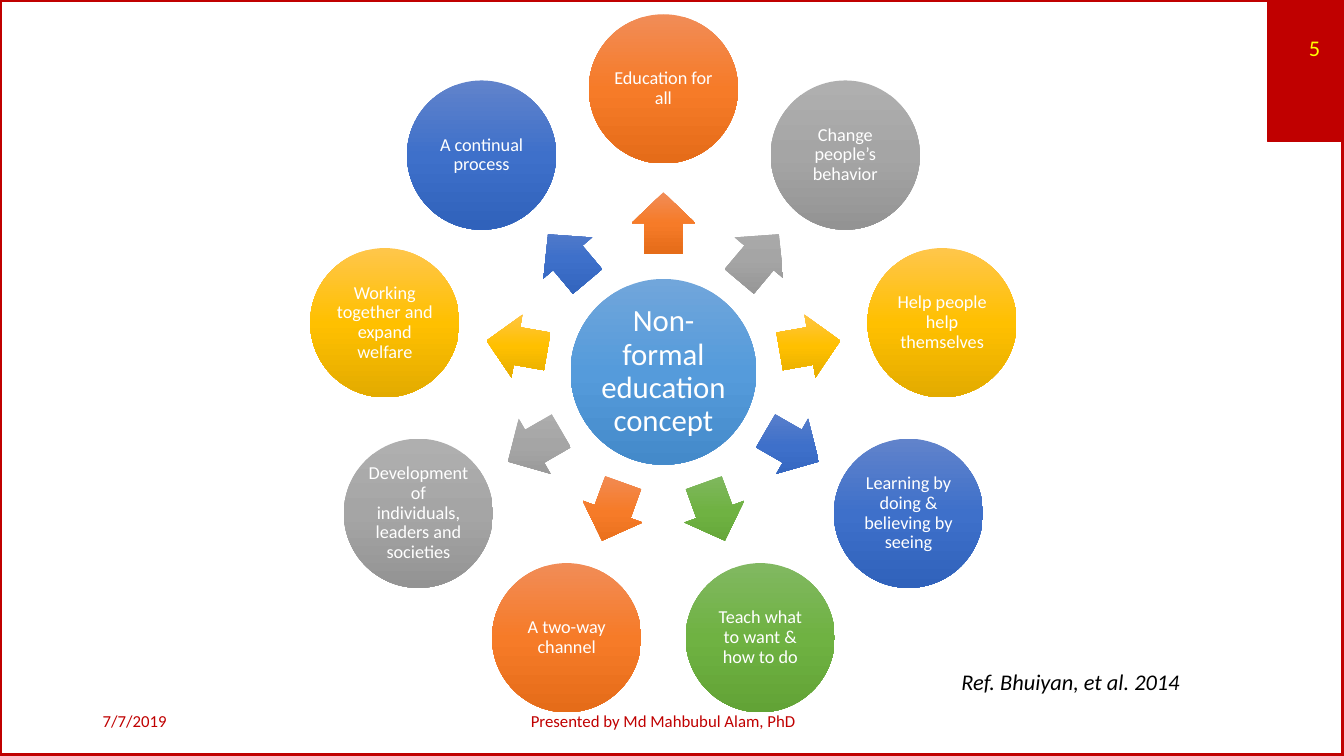
from copy import deepcopy
from math import cos, radians, sin

from pptx import Presentation
from pptx.dml.color import RGBColor
from pptx.enum.shapes import MSO_SHAPE
from pptx.enum.text import MSO_ANCHOR, PP_ALIGN
from pptx.util import Cm, Pt

HUB = ("Non-formal education concept", "sky")
CONCEPTS = [
    ("Education for all", "orange"),
    ("Change people’s behavior", "gray"),
    ("Help people help themselves", "gold"),
    ("Learning by doing & believing by seeing", "blue"),
    ("Teach what to want & how to do", "green"),
    ("A two-way channel", "orange"),
    ("Development of individuals, leaders and societies", "gray"),
    ("Working together and expand welfare", "gold"),
    ("A continual process", "blue"),
]
LABELS = [
    ("7/7/2019", (2.34, 17.65, 7.62, 1.02), "footer", PP_ALIGN.LEFT),
    ("Presented by Md Mahbubul Alam, PhD", (11.23, 17.65, 10.97, 1.02), "footer", PP_ALIGN.CENTER),
    ("5", (31.95, 0.61, 1.57, 1.17), "number", PP_ALIGN.RIGHT),
    ("Ref. Bhuiyan, et al. 2014", (23.98, 16.71, 8, 0.94), "reference", PP_ALIGN.LEFT),
]

THEME = {
    "font": "Calibri",
    "accent": "C00000",
    "gradients": {
        "sky": ("71A6DB", "559BDB", "448ACA"),
        "orange": ("F18C57", "F67B28", "E56C19"),
        "gray": ("AFAFAF", "A5A5A5", "939393"),
        "gold": ("FFC64B", "FFC000", "E3AB00"),
        "blue": ("6183CB", "3E70CA", "3062BB"),
        "green": ("81B861", "6FB242", "62A336"),
    },
    "text": {
        "hub": (22, "FFFFFF", False),
        "concept": (13, "FFFFFF", False),
        "footer": (12, "C00000", False),
        "number": (16, "FFFF00", False),
        "reference": (16, "000000", True),
    },
}

WIDTH, HEIGHT = 33.87, 19.05
CENTER_X, CENTER_Y = 16.72, 9.37
HUB_SIZE, CONCEPT_SIZE = 4.68, 3.76
ARROW_LENGTH, ARROW_WIDTH = 1.55, 1.6
CONCEPT_RADIUS, ARROW_RADIUS = 7.13, 3.75


def add_preset(slide, preset, left, top, width, height):
    shape = slide.shapes.add_shape(preset, Cm(left), Cm(top), Cm(width), Cm(height))
    shape.shadow.inherit = False
    shape.fill.background()
    shape.line.fill.background()
    return shape


def add_centered(slide, preset, x, y, width, height, color):
    shape = add_preset(slide, preset, x - width / 2, y - height / 2, width, height)
    shape.fill.gradient()
    shape.fill.gradient_angle = 270
    gradient = shape._element.spPr.find("{*}gradFill")
    gradient.set("rotWithShape", "0")
    stop_list = gradient.find("{*}gsLst")
    stop_list.insert(1, deepcopy(stop_list[0]))
    for stop, position, value in zip(shape.fill.gradient_stops, (0, 0.5, 1), THEME["gradients"][color]):
        stop.position = position
        stop.color.rgb = RGBColor.from_string(value)
    return shape


def write(shape, text, style, alignment, anchor=MSO_ANCHOR.MIDDLE):
    size, color, italic = THEME["text"][style]
    frame = shape.text_frame
    frame.word_wrap = True
    frame.vertical_anchor = anchor
    paragraph = frame.paragraphs[0]
    paragraph.alignment = alignment
    run = paragraph.add_run()
    run.text = text
    run.font.name = THEME["font"]
    run.font.size = Pt(size)
    run.font.italic = italic
    run.font.color.rgb = RGBColor.from_string(color)
    return frame


def add_circle(slide, x, y, size, text, color, style, inset):
    circle = add_centered(slide, MSO_SHAPE.OVAL, x, y, size, size, color)
    frame = write(circle, text, style, PP_ALIGN.CENTER)
    frame.margin_left = frame.margin_right = Cm(inset)
    frame.margin_top = frame.margin_bottom = Cm(inset)
    frame.paragraphs[0].line_spacing = 0.9


def add_frame(slide):
    accent = RGBColor.from_string(THEME["accent"])
    corner = add_preset(slide, MSO_SHAPE.RECTANGLE, 31.95, 0, WIDTH - 31.95, 3.56)
    corner.fill.solid()
    corner.fill.fore_color.rgb = accent
    border = add_preset(slide, MSO_SHAPE.RECTANGLE, 0, 0, WIDTH, HEIGHT)
    for shape, weight in ((corner, 1), (border, 3.5)):
        shape.line.color.rgb = accent
        shape.line.width = Pt(weight)


def add_wheel(slide):
    add_circle(slide, CENTER_X, CENTER_Y, HUB_SIZE, *HUB, "hub", 0.08)
    for index, (text, color) in enumerate(CONCEPTS):
        angle = 270 + index * 360 / len(CONCEPTS)
        across, down = cos(radians(angle)), sin(radians(angle))
        arrow = add_centered(
            slide, MSO_SHAPE.RIGHT_ARROW,
            CENTER_X + ARROW_RADIUS * across, CENTER_Y + ARROW_RADIUS * down,
            ARROW_LENGTH, ARROW_WIDTH, color,
        )
        arrow.adjustments[0] = 0.6
        arrow.adjustments[1] = 0.5
        arrow.rotation = angle % 360
        add_circle(
            slide, CENTER_X + CONCEPT_RADIUS * across, CENTER_Y + CONCEPT_RADIUS * down,
            CONCEPT_SIZE, text, color, "concept", 0.05,
        )


def add_labels(slide):
    for text, box, style, alignment in LABELS:
        label = slide.shapes.add_textbox(*map(Cm, box))
        anchor = MSO_ANCHOR.TOP if style == "reference" else MSO_ANCHOR.MIDDLE
        write(label, text, style, alignment, anchor)


def main():
    presentation = Presentation()
    presentation.slide_width = Cm(WIDTH)
    presentation.slide_height = Cm(HEIGHT)
    slide = presentation.slides.add_slide(presentation.slide_layouts[6])
    add_frame(slide)
    add_wheel(slide)
    add_labels(slide)
    presentation.save("out.pptx")


if __name__ == "__main__":
    main()
